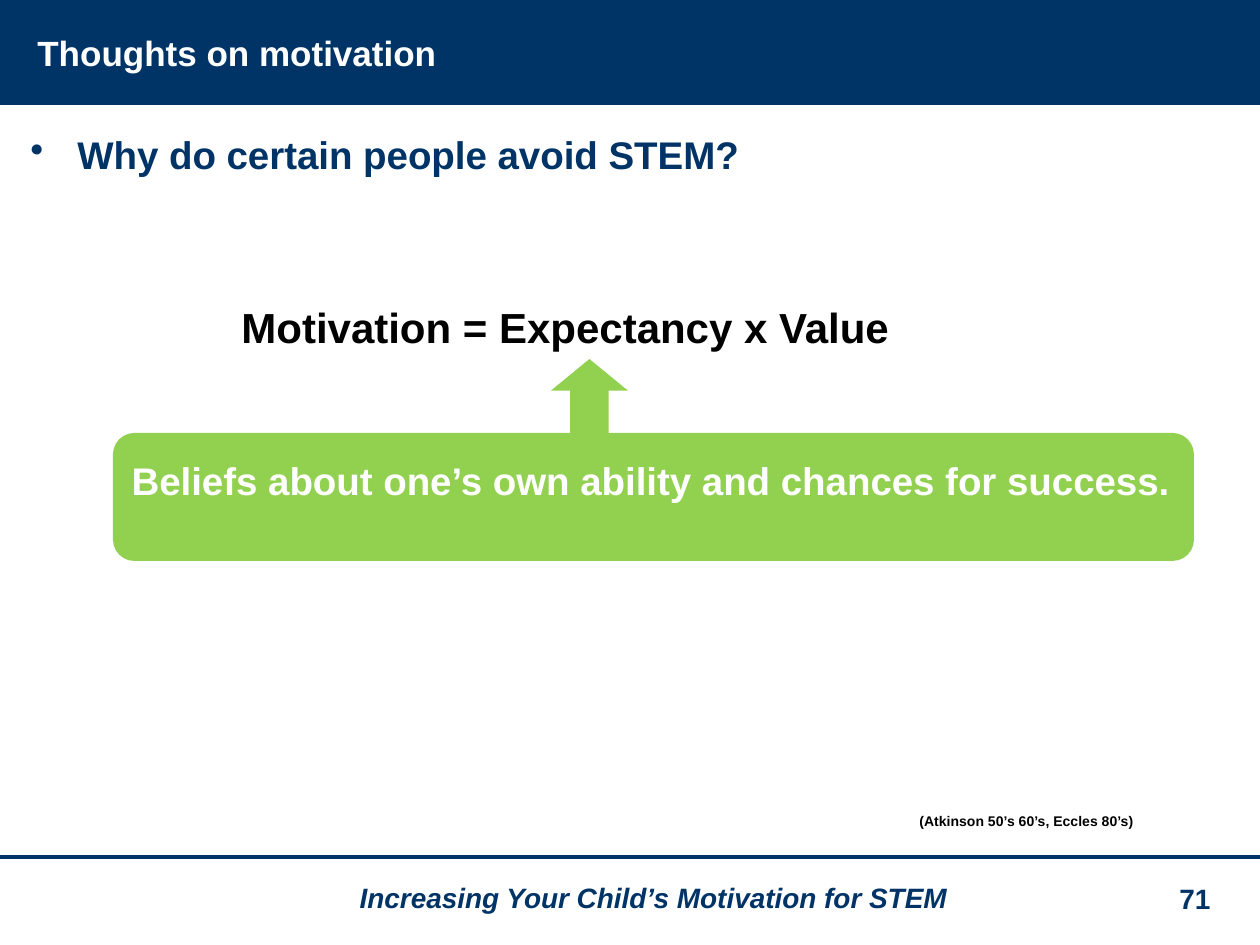
from lxml import etree
from pptx import Presentation
from pptx import util as u
from pptx.dml.color import RGBColor
from pptx.enum import shapes, text
from pptx.oxml import ns

SCALE = 914400 / 126  # EMU per px
COLORS = {"navy": "003366", "green": "92D050", "white": "FFFFFF", "black": "000000"}
FONT = {"name": "Arial", "bold": True}


def px(n):
    return u.Emu(round(n * SCALE))


def rgb(name):
    return RGBColor.from_string(COLORS[name])


class Deck:
    def __init__(self, wide, high):
        self.prs = Presentation()
        self.prs.slide_width, self.prs.slide_height = px(wide), px(high)
        self.slide = self.prs.slides.add_slide(self.prs.slide_layouts[6])

    def shape(self, kind, box, color):
        item = self.slide.shapes.add_shape(kind, *map(px, box))
        item.shadow.inherit = False
        item.fill.solid()
        item.fill.fore_color.rgb = rgb(color)
        item.line.fill.background()
        return item

    def rule(self, start, end, color, width):
        line = self.slide.shapes.add_connector(
            shapes.MSO_CONNECTOR.STRAIGHT, *map(px, start + end))
        line.line.color.rgb = rgb(color)
        line.line.width = u.Pt(width)
        etree.SubElement(line._element.spPr, ns.qn("a:effectLst"))

    def letter(self, item, words, size, color, align="LEFT", anchor="TOP",
               bullet=0, **extra):
        frame = item.text_frame
        frame.word_wrap = True
        frame.vertical_anchor = text.MSO_ANCHOR[anchor]
        para = frame.paragraphs[0]
        para.alignment = text.PP_ALIGN[align]
        if bullet:
            props = para._p.get_or_add_pPr()
            props.set("marL", str(px(bullet)))
            props.set("indent", str(-px(bullet)))
            etree.SubElement(props, ns.qn("a:buChar"), char="•")
        run = para.add_run()
        run.text = words
        for key, value in {**FONT, "size": u.Pt(size), **extra}.items():
            setattr(run.font, key, value)
        run.font.color.rgb = rgb(color)

    def label(self, box, *args, **style):
        self.letter(self.slide.shapes.add_textbox(*map(px, box)), *args, **style)


def main():
    deck = Deck(1260, 945)
    kinds = shapes.MSO_SHAPE

    # Header
    deck.shape(kinds.RECTANGLE, (0, 0, 1260, 105), "navy")
    deck.label((25, 26, 757, 53), "Thoughts on motivation", 20, "white",
               anchor="MIDDLE")

    # Footer
    deck.rule((0, 857), (1260, 857), "navy", 2)
    deck.label((217, 874, 873, 47), "Increasing Your Child’s Motivation for STEM",
               16, "navy", align="CENTER", italic=True)
    deck.label((1150, 875, 90, 47), "71", 16, "navy", align="CENTER")

    # Question and formula
    deck.label((18, 125, 1225, 712), "Why do certain people avoid STEM?",
               22, "navy", bullet=47)
    deck.label((229, 295, 911, 63), "Motivation = Expectancy x Value", 24, "black")

    # Callout pointing at Expectancy
    card = deck.shape(kinds.ROUNDED_RECTANGLE, (113, 433, 1081, 128), "green")
    card.text_frame.margin_top = px(18)
    deck.letter(card, "Beliefs about one’s own ability and chances for success.",
                22, "white")
    arrow = deck.shape(kinds.RIGHT_ARROW, (538, 372, 103, 77), "green")
    arrow.rotation = 270
    arrow.adjustments[1] = 0.41

    # Citation
    deck.label((907, 806, 334, 30), "(Atkinson 50’s 60’s, Eccles 80’s)", 8, "black")

    deck.prs.save("out.pptx")


if __name__ == "__main__":
    main()
